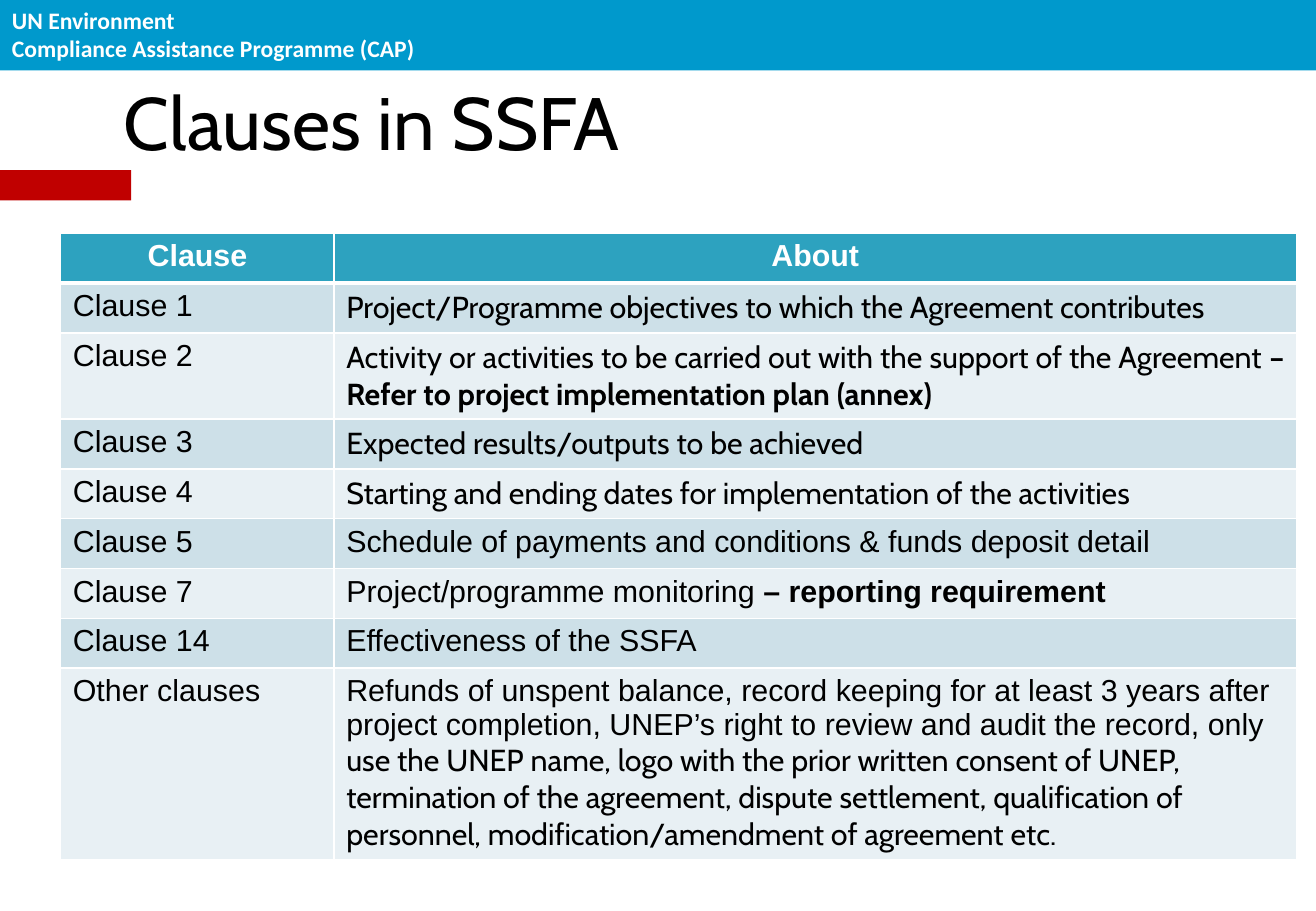
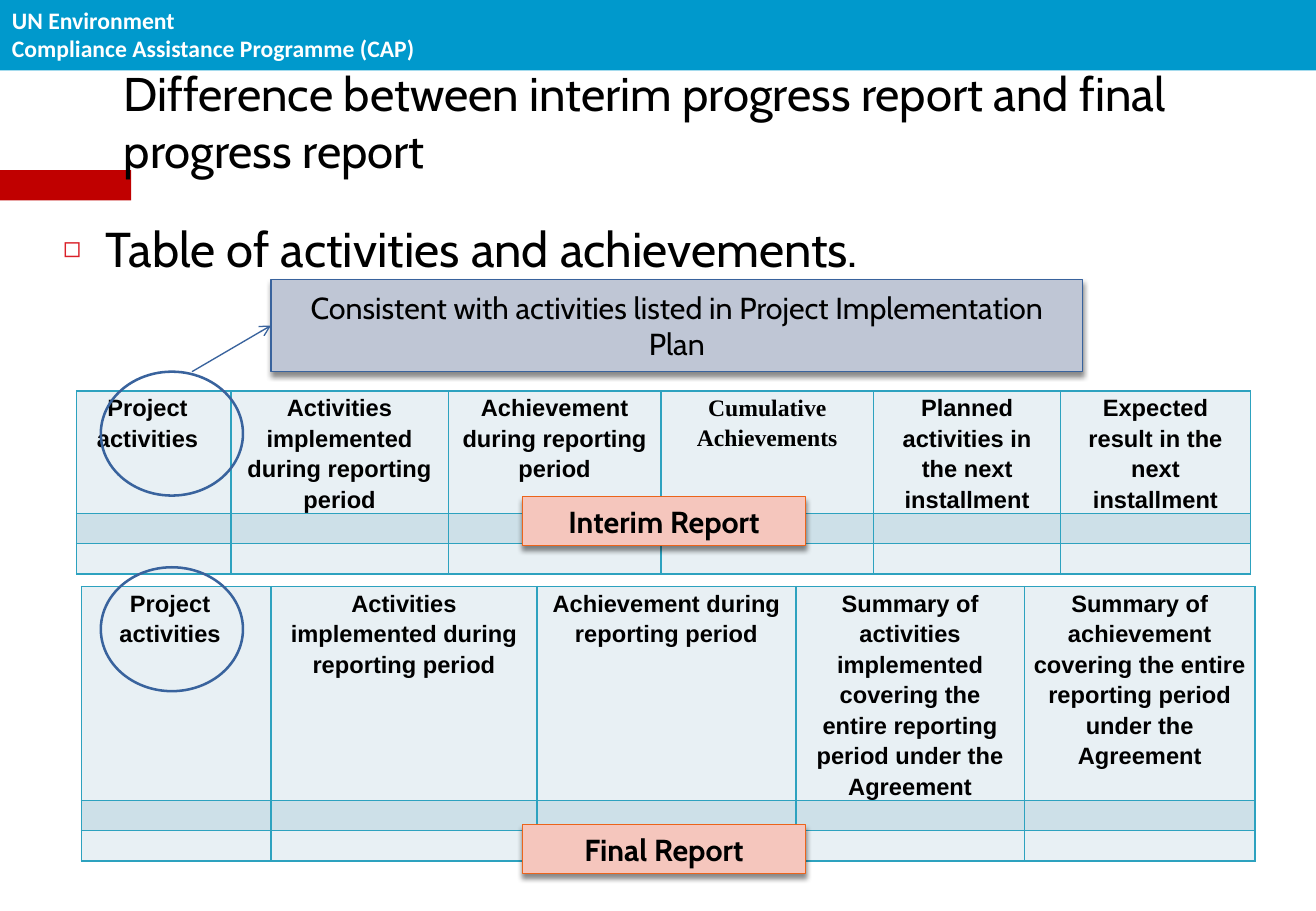
from lxml.etree import SubElement
from pptx import Presentation
from pptx.dml.color import RGBColor
from pptx.enum.shapes import MSO_CONNECTOR, MSO_SHAPE
from pptx.enum.text import MSO_ANCHOR, MSO_AUTO_SIZE, PP_ALIGN
from pptx.oxml import parse_xml
from pptx.oxml.ns import nsdecls, qn
from pptx.util import Inches, Pt

BLACK = RGBColor(0x00, 0x00, 0x00)
WHITE = RGBColor(0xFF, 0xFF, 0xFF)
RED = RGBColor(0xC0, 0x00, 0x00)
BULLET_RED = RGBColor(0xDA, 0x1F, 0x28)
BAND_BLUE = RGBColor(0x00, 0x99, 0xCC)
TEAL = RGBColor(0x2D, 0xA2, 0xBF)
ROW_DARK = RGBColor(0xCD, 0xE0, 0xE8)
ROW_LIGHT = RGBColor(0xE8, 0xF0, 0xF4)
PINK = RGBColor(0xF5, 0xC6, 0xBD)
ORANGE = RGBColor(0xEB, 0x64, 0x1B)
GREY_BLUE = RGBColor(0xBF, 0xC6, 0xD5)
NAVY = RGBColor(0x39, 0x63, 0x9D)

ARIAL, CABIN, CALIBRI, TIMES = "Arial", "Cabin", "Calibri", "Times New Roman"
TITLE_ONLY, TITLE_AND_BODY = 5, 1

# Each clause: label, then runs of (text, font, bold)
CLAUSES = [
    ("Clause 1", [("Project/Programme objectives to which the Agreement contributes", CABIN, False)]),
    ("Clause 2", [
        ("Activity or activities to be carried out with the support of the Agreement ", CABIN, False),
        ("– Refer to project implementation plan (annex)", CABIN, True)]),
    ("Clause 3", [("Expected results/outputs to be achieved", CABIN, False)]),
    ("Clause 4", [("Starting and ending dates for implementation of the activities", CABIN, False)]),
    ("Clause 5", [("Schedule of payments and conditions & funds deposit detail", ARIAL, False)]),
    ("Clause 7", [("Project/programme monitoring ", ARIAL, False),
                  ("– reporting requirement", ARIAL, True)]),
    ("Clause 14", [("Effectiveness of the SSFA", ARIAL, False)]),
    ("Other clauses", [
        ("Refunds of unspent balance, record keeping for at least 3 years after project "
         "completion, UNEP’s right to review and audit the record, only ", ARIAL, False),
        ("use the UNEP name, logo with the prior written consent of UNEP, termination of the "
         "agreement, dispute settlement, qualification of personnel, modification/amendment "
         "of agreement etc.", CABIN, False)]),
]
COMMON_HEADINGS = [
    ("Project activities", ARIAL, True),
    ("Activities implemented during reporting period", ARIAL, True),
    ("Achievement during reporting period", ARIAL, True),
]
INTERIM_HEADINGS = COMMON_HEADINGS + [
    ("Cumulative Achievements", TIMES, True),
    ("Planned activities in the next installment", ARIAL, True),
    ("Expected result in the next installment", ARIAL, True),
]
FINAL_HEADINGS = COMMON_HEADINGS + [
    ("Summary of activities implemented covering the entire reporting period under the Agreement",
     ARIAL, True),
    ("Summary of achievement covering the entire reporting period under the Agreement",
     ARIAL, True),
]


def write_runs(paragraph, runs, size, color=BLACK, align=PP_ALIGN.LEFT):
    paragraph.alignment = align
    for text, font_name, bold in runs:
        run = paragraph.add_run()
        run.text = text
        font = run.font
        font.name, font.size, font.bold = font_name, Pt(size), bold
        font.color.rgb = color


def set_borders(cell, color, bottom_width=1):
    """Draw all four sides 1 point wide, except a bottom of its own width."""
    properties = cell._tc.get_or_add_tcPr()
    widths = {"lnL": 1, "lnR": 1, "lnT": 1, "lnB": bottom_width}
    for position, (side, width) in enumerate(widths.items()):
        properties.insert(position, parse_xml(
            f'<a:{side} {nsdecls("a")} w="{Pt(width)}"><a:solidFill>'
            f'<a:srgbClr val="{color}"/></a:solidFill></a:{side}>'))


class Deck:
    """Holds the shared style and the slide being built."""

    def __init__(self):
        self.presentation = Presentation()
        self.presentation.slide_width = Inches(10.83)
        self.presentation.slide_height = Inches(7.5)
        self.slide = None

    def add_slide(self, layout, title, title_size):
        first = self.slide is None
        self.slide = self.presentation.slides.add_slide(self.presentation.slide_layouts[layout])
        if first:
            self.decorate_master()
        frame = self.place(self.slide.shapes.title, 0.92, 0.58, 9.75, 0.83)
        frame.vertical_anchor = MSO_ANCHOR.MIDDLE
        write_runs(frame.paragraphs[0], [(title, CABIN, False)], title_size)

    def decorate_master(self):
        """Draw the bands and the programme name, then move them to the master."""
        marker = self.shape(MSO_SHAPE.RECTANGLE, 0, 1.4, 1.08, 0.25, RED)
        band = self.shape(MSO_SHAPE.RECTANGLE, 0, 0, 10.83, 0.58, BAND_BLUE)
        name = self.slide.shapes.add_textbox(0, 0, Inches(3.68), Inches(0.57))
        frame = name.text_frame
        frame.word_wrap = True
        lines = ["UN Environment", "Compliance Assistance Programme (CAP)"]
        for paragraph, line in zip([frame.paragraphs[0], frame.add_paragraph()], lines):
            write_runs(paragraph, [(line, CALIBRI, True)], 14, WHITE)
        for number, shape in enumerate([marker, band, name], start=20):
            self.presentation.slide_master.shapes.element.append(shape.element)
            shape.element.xpath(".//p:cNvPr")[0].set("id", str(number))

    def place(self, placeholder, left, top, width, height):
        placeholder.left, placeholder.top = Inches(left), Inches(top)
        placeholder.width, placeholder.height = Inches(width), Inches(height)
        placeholder.text_frame.auto_size = MSO_AUTO_SIZE.NONE
        return placeholder.text_frame

    def bullet(self, text):
        frame = self.place(self.slide.placeholders[1], 0.42, 1.75, 9.97, 4.92)
        paragraph = frame.paragraphs[0]
        properties = paragraph._p.get_or_add_pPr()
        properties.set("marL", str(Inches(0.35)))
        properties.set("indent", str(-Inches(0.35)))
        bullet_color = SubElement(properties, qn("a:buClr"))
        SubElement(bullet_color, qn("a:srgbClr"), val=str(BULLET_RED))
        SubElement(properties, qn("a:buSzPct"), val="60000")
        SubElement(properties, qn("a:buChar"), char="◻")
        paragraph.space_before = Pt(0)
        write_runs(paragraph, [(text, CABIN, False)], 29)

    def shape(self, kind, left, top, width, height, fill=None, line=None, line_width=0.79):
        shape = self.slide.shapes.add_shape(
            kind, Inches(left), Inches(top), Inches(width), Inches(height))
        shape.shadow.inherit = False
        if fill is None:
            shape.fill.background()
        else:
            shape.fill.solid()
            shape.fill.fore_color.rgb = fill
        if line is None:
            shape.line.fill.background()
        else:
            shape.line.color.rgb = line
            shape.line.width = Pt(line_width)
        return shape

    def label(self, text, left, top, width, height, fill, line, bold):
        """Add a captioned rectangle with a soft shadow below it."""
        shape = self.shape(MSO_SHAPE.RECTANGLE, left, top, width, height, fill, line)
        effects = shape.element.spPr.find(qn("a:effectLst"))
        shadow = SubElement(effects, qn("a:outerShdw"), blurRad=str(Pt(3)), dist=str(Pt(2.4)),
                            dir="5400000", rotWithShape="0")
        shadow_color = SubElement(shadow, qn("a:srgbClr"), val=str(BLACK))
        SubElement(shadow_color, qn("a:alpha"), val="45000")
        frame = shape.text_frame
        frame.word_wrap = True
        frame.vertical_anchor = MSO_ANCHOR.MIDDLE
        write_runs(frame.paragraphs[0], [(text, CABIN, bold)], 18, align=PP_ALIGN.CENTER)
        return shape

    def circle(self, top):
        self.shape(MSO_SHAPE.OVAL, 0.83, top, 1.17, 1.02, line=NAVY, line_width=1.5)

    def arrow_to_left_side(self, left, top, target):
        arrow = self.slide.shapes.add_connector(
            MSO_CONNECTOR.STRAIGHT, Inches(left), Inches(top), target.left, target.top)
        arrow.end_connect(target, 1)
        arrow.line.color.rgb = NAVY
        arrow.line.width = Pt(0.79)
        SubElement(arrow.line._get_or_add_ln(), qn("a:tailEnd"), type="arrow")
        SubElement(arrow.element.spPr, qn("a:effectLst"))

    def table(self, left, top, column_widths, row_heights):
        table = self.slide.shapes.add_table(
            len(row_heights), len(column_widths), Inches(left), Inches(top),
            Inches(sum(column_widths)), Inches(sum(row_heights))).table
        table.horz_banding = False
        for column, width in zip(table.columns, column_widths):
            column.width = Inches(width)
        for row, height in zip(table.rows, row_heights):
            row.height = Inches(height)
        for row_number, row in enumerate(table.rows):
            for cell in row.cells:
                cell.fill.solid()
                cell.fill.fore_color.rgb = ROW_DARK if row_number % 2 else ROW_LIGHT
        return table

    def clause_table(self):
        table = self.table(0.5, 1.92, [2.25, 7.92], [0.41] * (len(CLAUSES) + 1))
        for cell, heading in zip(table.rows[0].cells, ["Clause", "About"]):
            cell.fill.fore_color.rgb = TEAL
            write_runs(cell.text_frame.paragraphs[0], [(heading, ARIAL, True)], 18, WHITE,
                       PP_ALIGN.CENTER)
            set_borders(cell, WHITE, bottom_width=3)
        for row_number, (clause, about) in enumerate(CLAUSES, start=1):
            align = PP_ALIGN.JUSTIFY if clause == "Clause 2" else PP_ALIGN.LEFT
            name_cell, about_cell = table.rows[row_number].cells
            write_runs(name_cell.text_frame.paragraphs[0], [(clause, ARIAL, False)], 18)
            write_runs(about_cell.text_frame.paragraphs[0], about, 18, align=align)
            set_borders(name_cell, WHITE)
            set_borders(about_cell, WHITE)

    def report_table(self, left, top, column_widths, heading_height, headings):
        """Add a table with a row of headings above two empty rows."""
        table = self.table(left, top, column_widths, [heading_height, 0.25, 0.25])
        for cell in table.iter_cells():
            cell.margin_left = cell.margin_right = Inches(0.07)
            cell.margin_top = cell.margin_bottom = 0
            cell.text_frame.paragraphs[0].line_spacing = 1.15
            set_borders(cell, TEAL)
        for cell, heading in zip(table.rows[0].cells, headings):
            write_runs(cell.text_frame.paragraphs[0], [heading], 14, align=PP_ALIGN.CENTER)
        table.cell(0, 0).margin_right = Inches(0.17)
        for row_number in (1, 2):
            for cell in table.rows[row_number].cells:
                SubElement(cell.text_frame.paragraphs[0]._p, qn("a:endParaRPr"), sz="1400")


def main():
    deck = Deck()
    deck.add_slide(TITLE_ONLY, "Clauses in SSFA", 44)
    deck.clause_table()

    deck.add_slide(TITLE_AND_BODY,
                   "Difference between interim progress report and final progress report", 28)
    deck.bullet("Table of activities and achievements.")
    deck.report_table(0.63, 3.22, [1.27, 1.79, 1.75, 1.75, 1.54, 1.56], 1, INTERIM_HEADINGS)
    deck.report_table(0.67, 4.83, [1.56, 2.19, 2.13, 1.88, 1.9], 1.75, FINAL_HEADINGS)
    for text, top in [("Interim Report", 4.09), ("Final Report", 6.79)]:
        deck.label(text, 4.3, top, 2.33, 0.4, PINK, ORANGE, bold=True)
    note = deck.label("Consistent with activities listed in Project Implementation Plan",
                      2.23, 2.3, 6.68, 0.76, GREY_BLUE, NAVY, bold=False)
    for top in (3.06, 4.67):
        deck.circle(top)
    deck.arrow_to_left_side(1.58, 3.06, note)
    deck.presentation.save("out.pptx")


if __name__ == "__main__":
    main()
